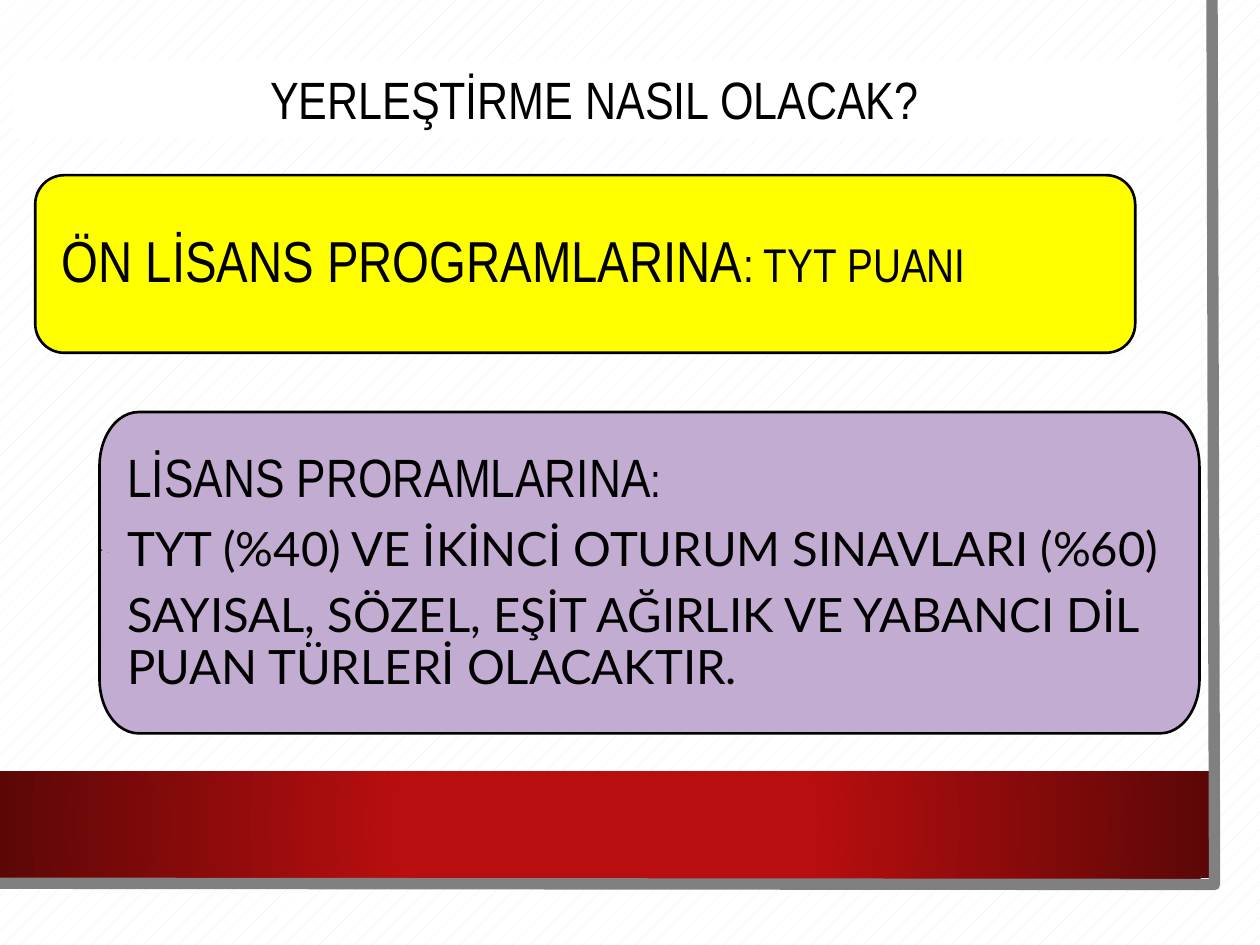
from lxml.etree import SubElement
from pptx import Presentation
from pptx.dml.color import RGBColor
from pptx.enum.dml import MSO_PATTERN as Pattern
from pptx.enum.shapes import MSO_SHAPE as Preset
from pptx.enum.text import MSO_ANCHOR as Anchor, PP_ALIGN as Align
from pptx.oxml import parse_xml
from pptx.oxml.ns import nsdecls, qn
from pptx.util import Inches, Pt

WIDTH, HEIGHT = 10, 7.5
NARROW, WIDE = "Arial Narrow", "Lato"
COLORS = {
    "paper": "FFFFFF", "pattern": "E9E9E9", "ink": "000000", "frame": "808080",
    "yellow": "FFFF00", "lilac": "C3ACD1", "red": "B80E0F", "dark red": "5C0707",
}


def color(name):
    return RGBColor.from_string(COLORS[name])


def fill_pattern(fill):
    fill.patterned()
    fill.pattern = Pattern.PERCENT_5
    fill.fore_color.rgb = color("pattern")
    fill.back_color.rgb = color("paper")


def fill_solid(shape, name):
    shape.fill.solid()
    shape.fill.fore_color.rgb = color(name)


def set_line(shape, name, width):
    shape.line.color.rgb = color(name)
    shape.line.width = Pt(width)


def add_rectangle(slide, left, top, width, height):
    shape = slide.shapes.add_shape(
        Preset.RECTANGLE, *map(Inches, (left, top, width, height)))
    shape.shadow.inherit = False
    shape.fill.background()
    shape.line.fill.background()
    return shape


def add_runs(paragraph, runs):
    for text, size, font in runs:
        run = paragraph.add_run()
        run.text = text
        run.font.size = Pt(size)
        run.font.name = font
        run.font.color.rgb = color("ink")


def set_insets(frame, left, top, right, bottom):
    frame.margin_left, frame.margin_top = Inches(left), Inches(top)
    frame.margin_right, frame.margin_bottom = Inches(right), Inches(bottom)


def round_corners(shape, across, down):
    """Give a rectangle elliptical corners, which the preset shape does not offer."""
    width, height = shape.width, shape.height
    across, down = Inches(across), Inches(down)
    sides = [(across, 0, width - across, 0),
             (width, down, width, height - down),
             (width - across, height, across, height),
             (0, height - down, 0, down)]
    segments = ""
    for index, (start_x, start_y, end_x, end_y) in enumerate(sides):
        command = "lnTo" if index else "moveTo"
        angle = (270 + 90 * index) % 360 * 60000
        segments += (
            f'<a:{command}><a:pt x="{start_x}" y="{start_y}"/></a:{command}>'
            f'<a:lnTo><a:pt x="{end_x}" y="{end_y}"/></a:lnTo>'
            f'<a:arcTo wR="{across}" hR="{down}" stAng="{angle}" swAng="5400000"/>')
    geometry = parse_xml(
        f'<a:custGeom {nsdecls("a")}><a:avLst/><a:gdLst/><a:ahLst/><a:cxnLst/>'
        '<a:rect l="0" t="0" r="r" b="b"/><a:pathLst>'
        f'<a:path w="{width}" h="{height}">{segments}<a:close/></a:path>'
        '</a:pathLst></a:custGeom>')
    properties = shape._element.spPr
    properties.replace(properties.find(qn("a:prstGeom")), geometry)


def add_rounded_box(slide, place, radii, fill, inset, paragraphs):
    shape = add_rectangle(slide, *place)
    round_corners(shape, *radii)
    fill_solid(shape, fill)
    set_line(shape, "ink", 1.5)

    frame = shape.text_frame
    frame.word_wrap = True
    frame.vertical_anchor = Anchor.MIDDLE
    set_insets(frame, inset, inset, inset, inset)
    for index, runs in enumerate(paragraphs):
        paragraph = frame.add_paragraph() if index else frame.paragraphs[0]
        paragraph.alignment = Align.LEFT
        paragraph.line_spacing = 0.9
        paragraph.space_after = Pt(9)
        add_runs(paragraph, runs)


def add_red_band(slide):
    band = add_rectangle(slide, 0, 6.12, 9.6, 0.85)
    gradient = parse_xml(
        f'<a:gradFill {nsdecls("a")} rotWithShape="1"><a:gsLst>'
        f'<a:gs pos="34000"><a:srgbClr val="{COLORS["red"]}"/></a:gs>'
        f'<a:gs pos="100000"><a:srgbClr val="{COLORS["dark red"]}"/></a:gs>'
        '</a:gsLst><a:path path="circle">'
        '<a:fillToRect l="50000" t="50000" r="50000" b="50000"/></a:path></a:gradFill>')
    properties = band._element.spPr
    properties.replace(properties.find(qn("a:noFill")), gradient)


def add_frame_line(slide):
    points = [(Inches(x), Inches(y)) for x, y in ((9.62, 0), (9.64, 7.02), (-0.02, 7.01))]
    builder = slide.shapes.build_freeform(*points[0])
    builder.add_line_segments(points[1:], close=False)
    frame = builder.convert_to_shape()
    frame.shadow.inherit = False
    frame.fill.background()
    set_line(frame, "frame", 6.5)


def add_backdrop(slide):
    fill_pattern(slide.background.fill)
    fill_pattern(add_rectangle(slide, 0, 0, 9.83, 7.27).fill)
    add_red_band(slide)
    add_frame_line(slide)


def add_title(slide, text):
    title = add_rectangle(slide, 0.1, 0.48, 9.24, 0.61)
    fill_solid(title, "paper")
    title.text_frame.word_wrap = True
    title.text_frame.vertical_anchor = Anchor.TOP
    paragraph = title.text_frame.paragraphs[0]
    paragraph.alignment = Align.CENTER
    add_runs(paragraph, [(text, 30, NARROW)])


def add_tiny_bullet(slide):
    frame = add_rectangle(slide, 0.52, 4.35, 8.73, 0.07).text_frame
    frame.word_wrap = True
    frame.vertical_anchor = Anchor.TOP
    set_insets(frame, 0.28, 0.01, 0.03, 0.01)
    paragraph = frame.paragraphs[0]
    properties = paragraph._p.get_or_add_pPr()
    properties.set("marL", str(Inches(0.05)))
    properties.set("indent", str(-Inches(0.05)))
    SubElement(properties, qn("a:buChar")).set("char", "••")
    paragraph.alignment = Align.LEFT
    paragraph.line_spacing = 0.9
    add_runs(paragraph, [(".", 3, NARROW)])


def main():
    presentation = Presentation()
    presentation.slide_width = Inches(WIDTH)
    presentation.slide_height = Inches(HEIGHT)
    slide = presentation.slides.add_slide(presentation.slide_layouts[6])

    add_backdrop(slide)
    add_rounded_box(slide, (0.28, 1.39, 8.73, 1.41), (0.23, 0.23), "yellow", 0.21, [
        [("ÖN LİSANS PROGRAMLARINA", 33, NARROW), (": TYT PUANI", 27, NARROW)],
    ])
    add_rounded_box(slide, (0.79, 3.27, 8.73, 2.55), (0.31, 0.43), "lilac", 0.22, [
        [("LİSANS PRORAMLARINA", 30.8, NARROW), (":", 27, NARROW)],
        [("TYT (%40) VE İKİNCİ OTURUM SINAVLARI (%60)", 27, WIDE)],
        [("SAYISAL, SÖZEL, EŞİT AĞIRLIK VE YABANCI DİL PUAN TÜRLERİ OLACAKTIR.",
          27, WIDE)],
    ])
    add_tiny_bullet(slide)
    add_title(slide, "YERLEŞTİRME NASIL OLACAK?")
    presentation.save("out.pptx")


if __name__ == "__main__":
    main()
